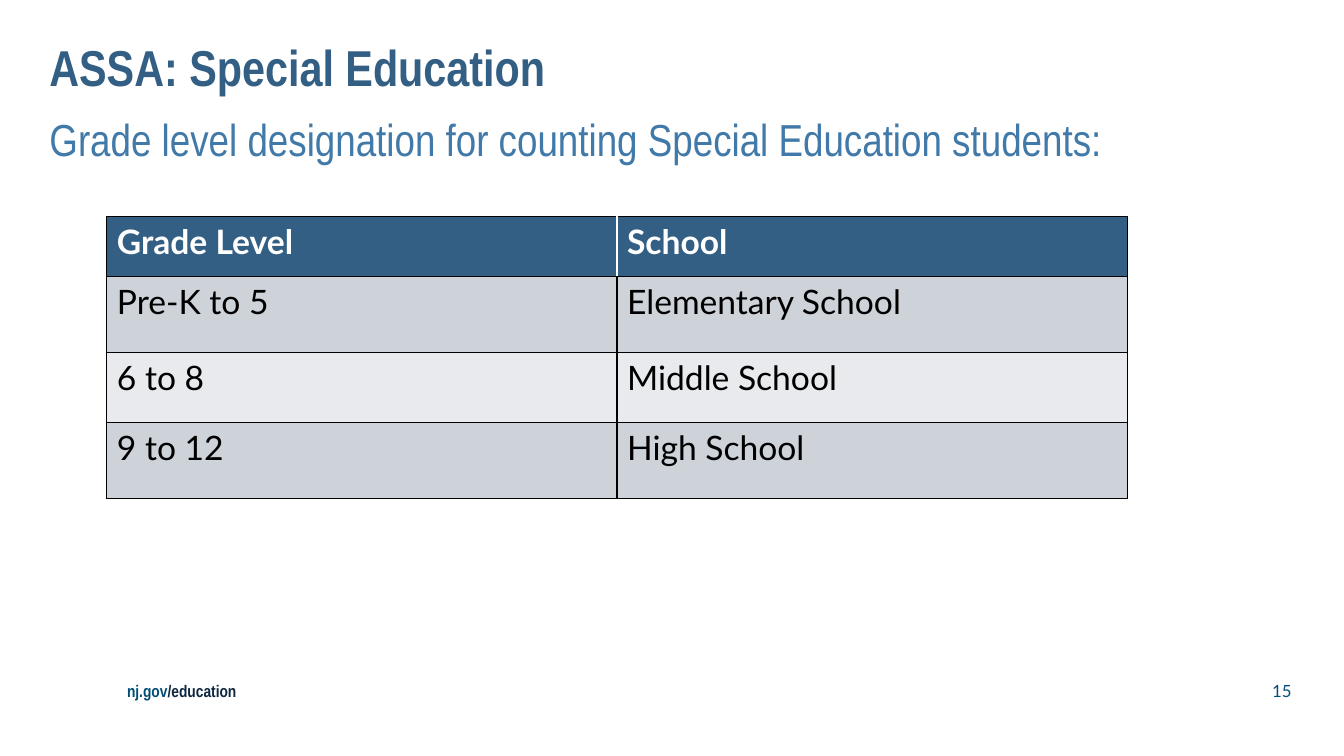
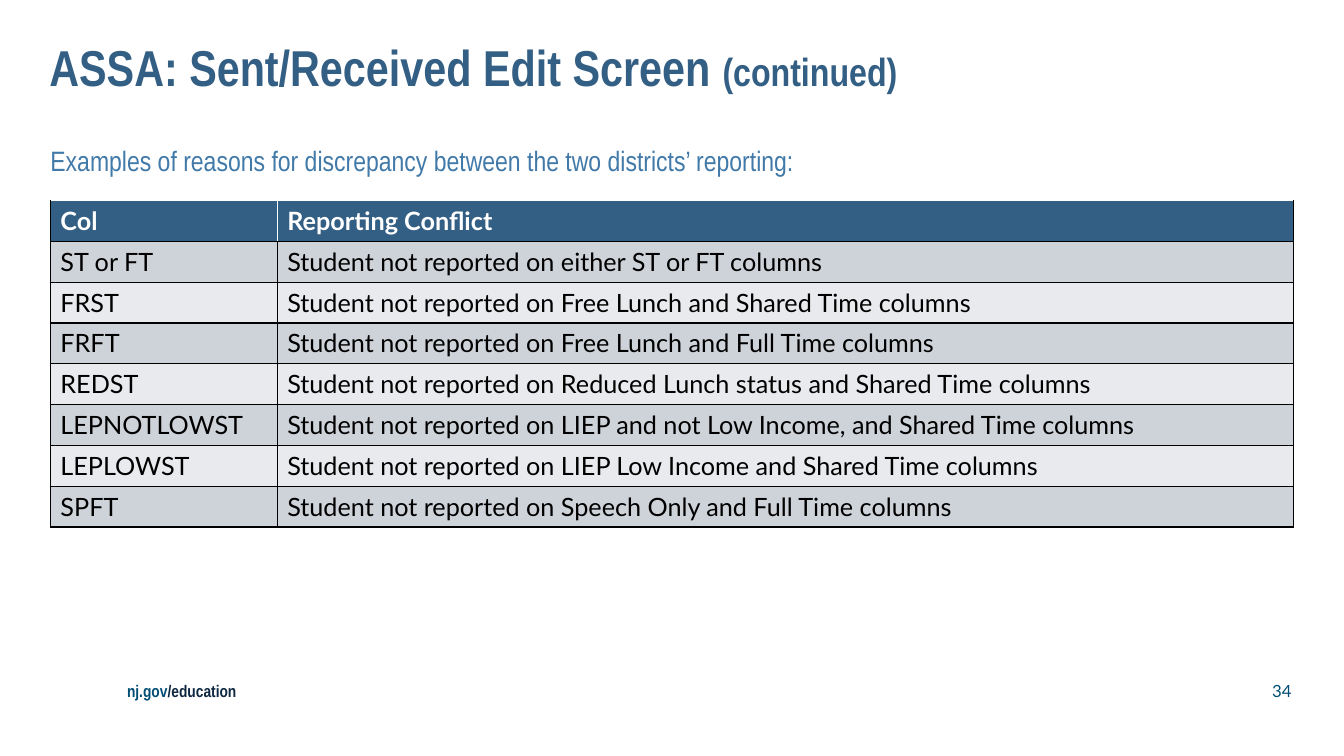
import pptx
import pptx.util
import pptx.dml.color
import pptx.enum.text
import pptx.oxml.ns
from lxml import etree

Inches = pptx.util.Inches
Pt = pptx.util.Pt
Align = pptx.enum.text.PP_ALIGN
Anchor = pptx.enum.text.MSO_ANCHOR

COLORS = {
    "title": "345F84", "subtitle": "4179A8", "site": "004E75", "section": "0E2841",
    "header": "345F84", "odd": "CED2D9", "even": "E8EAED",
    "white": "FFFFFF", "black": "000000",
}
HEADING_FONT = "Arial Narrow"
BODY_FONT = "Lato"
TITLE_AREA = (0.49, 0.43, 12.33, 0.46)
FOOTER_AREA = (1.26, 6.75, 5.62, 0.2)
NUMBER_AREA = (7.19, 6.75, 5.62, 0.2)
FOOTER = [("nj.gov", 12, "site"), ("/education", 12, "section")]

SLIDES = [
    {
        "number": "15",
        "title": [("ASSA: Special Education", 36, "title")],
        "subtitle": [("Grade level designation for counting Special Education students:", 32, "subtitle")],
        "subtitle_area": (0.49, 1.06, 12.35, 1.08),
        "table_at": (1.06, 2.15),
        "columns": [5.06, 5.06],
        "row_heights": [0.59, 0.76, 0.69, 0.76],
        "size": 24,
        "header_top": "black",
        "rows": [
            ("Grade Level", "School"),
            ("Pre-K to 5", "Elementary School"),
            ("6 to 8", "Middle School"),
            ("9 to 12", "High School"),
        ],
    },
    {
        "number": "34",
        "title": [("ASSA: Sent/Received Edit Screen ", 36, "title"), ("(continued)", 28, "title")],
        "subtitle": [("Examples of reasons for discrepancy between the two districts’ reporting:", 20, "subtitle")],
        "subtitle_area": (0.5, 1.17, 12.35, 0.46),
        "table_at": (0.5, 1.99),
        "columns": [2.25, 10.08],
        "row_heights": [0.405] * 8,
        "size": 18,
        "header_top": "white",
        "rows": [
            ("Col", "Reporting Conflict"),
            ("ST or FT", "Student not reported on either ST or FT columns"),
            ("FRST", "Student not reported on Free Lunch and Shared Time columns"),
            ("FRFT", "Student not reported on Free Lunch and Full Time columns"),
            ("REDST", "Student not reported on Reduced Lunch status and Shared Time columns"),
            ("LEPNOTLOWST", "Student not reported on LIEP and not Low Income, and Shared Time columns"),
            ("LEPLOWST", "Student not reported on LIEP Low Income and Shared Time columns"),
            ("SPFT", "Student not reported on Speech Only and Full Time columns"),
        ],
    },
]


def color(name):
    return pptx.dml.color.RGBColor.from_string(COLORS[name])


def style(font, size, name, face, bold):
    font.size = Pt(size)
    font.color.rgb = color(name)
    font.name = face
    font.bold = bold


def write(box, area, spans, face=HEADING_FONT, bold=False, align=Align.LEFT,
          anchor=Anchor.TOP, spacing=1.0):
    box.left, box.top, box.width, box.height = map(Inches, area)
    frame = box.text_frame
    frame.word_wrap = True
    frame.auto_size = pptx.enum.text.MSO_AUTO_SIZE.NONE
    frame.margin_left = frame.margin_top = frame.margin_right = frame.margin_bottom = 0
    frame.vertical_anchor = anchor
    para = frame.paragraphs[0]
    para.alignment = align
    para.line_spacing = spacing
    para.space_before = Pt(0)
    for text, size, name in spans:
        span = para.add_run()
        span.text = text
        style(span.font, size, name, face, bold)
    return para


def remove_bullet(para):
    properties = para._p.get_or_add_pPr()
    properties.set("marL", "0")
    properties.set("indent", "0")
    etree.SubElement(properties, pptx.oxml.ns.qn("a:buNone"))


def set_borders(cell, left, right, top, bottom):
    properties = cell._tc.get_or_add_tcPr()
    for side, name in zip("LRTB", (left, right, top, bottom)):
        line = etree.SubElement(properties, pptx.oxml.ns.qn("a:ln" + side), w=str(Pt(1)))
        fill = etree.SubElement(line, pptx.oxml.ns.qn("a:solidFill"))
        etree.SubElement(fill, pptx.oxml.ns.qn("a:srgbClr"), val=COLORS[name])


def add_grid(page, content):
    rows, columns, heights = content["rows"], content["columns"], content["row_heights"]
    left, top = content["table_at"]
    table = page.shapes.add_table(
        len(rows), len(columns), Inches(left), Inches(top),
        Inches(sum(columns)), Inches(sum(heights))).table
    for column, width in zip(table.columns, columns):
        column.width = Inches(width)
    for row, height in zip(table.rows, heights):
        row.height = Inches(height)
    for r, texts in enumerate(rows):
        header = r == 0
        fill = "header" if header else "odd" if r % 2 else "even"
        divider = "white" if header else "black"
        for c, text in enumerate(texts):
            cell = table.cell(r, c)
            set_borders(
                cell,
                left=divider if c > 0 else "black",
                right=divider if c < len(columns) - 1 else "black",
                top=content["header_top"] if header else "black",
                bottom="black")
            cell.fill.solid()
            cell.fill.fore_color.rgb = color(fill)
            cell.text_frame.text = text
            span = cell.text_frame.paragraphs[0].runs[0]
            style(span.font, content["size"], "white" if header else "black", BODY_FONT, header)


def add_footer(page, number):
    for area, spans, face, bold, align in (
        (FOOTER_AREA, FOOTER, HEADING_FONT, True, Align.LEFT),
        (NUMBER_AREA, [(number, 12, "site")], BODY_FONT, False, Align.RIGHT),
    ):
        box = page.shapes.add_textbox(*map(Inches, area))
        write(box, area, spans, face, bold, align, Anchor.MIDDLE)


def add_page(deck, content):
    page = deck.slides.add_slide(deck.slide_layouts[1])
    write(page.shapes.title, TITLE_AREA, content["title"], bold=True, spacing=0.9)
    subtitle = write(page.placeholders[1], content["subtitle_area"], content["subtitle"],
                     spacing=Pt(42))
    remove_bullet(subtitle)
    add_grid(page, content)
    add_footer(page, content["number"])


def main():
    deck = pptx.Presentation()
    deck.slide_width = Inches(13.33)
    deck.slide_height = Inches(7.5)
    for content in SLIDES:
        add_page(deck, content)
    deck.save("out.pptx")


if __name__ == "__main__":
    main()
